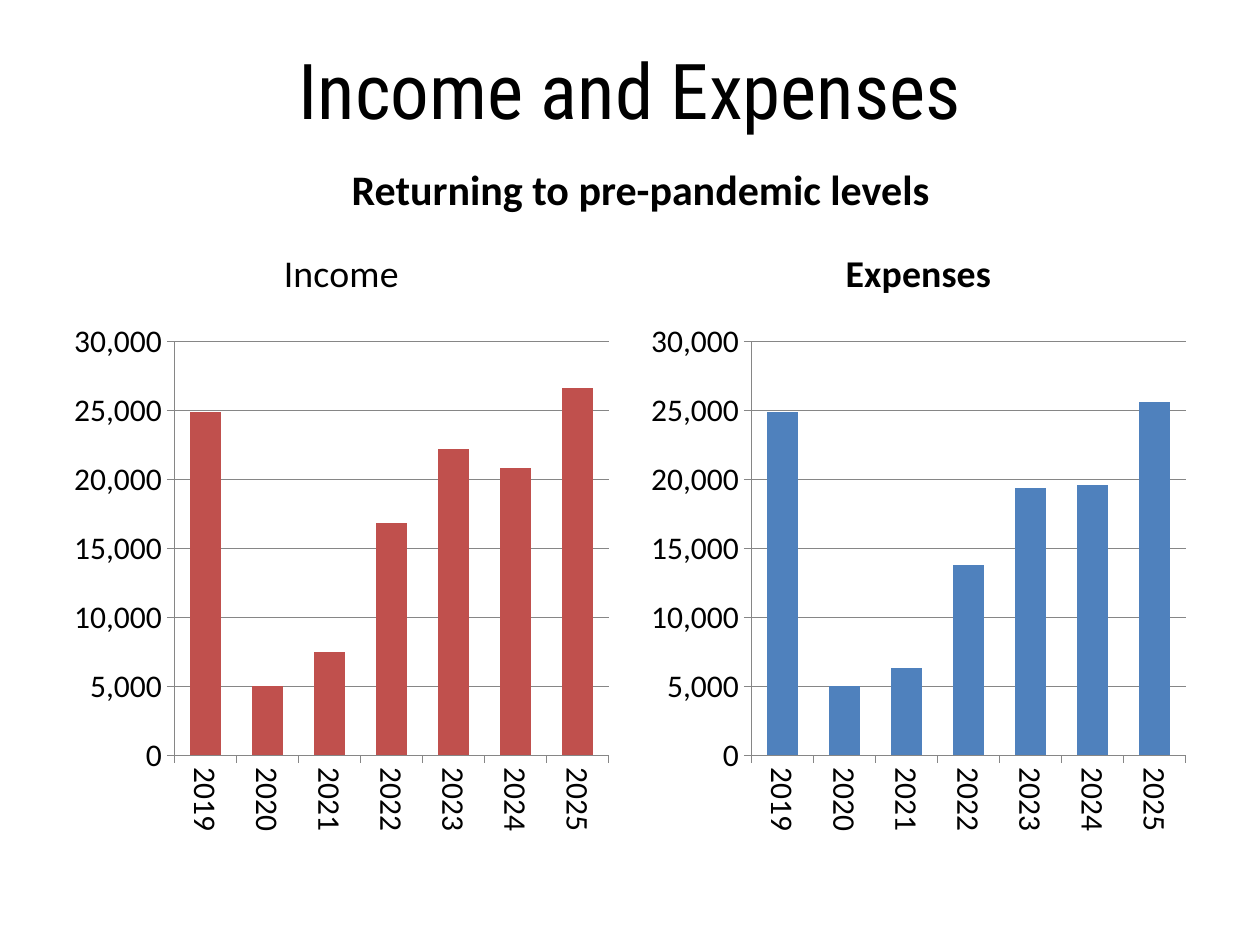
from dataclasses import dataclass

from pptx import Presentation
from pptx.chart.data import CategoryChartData
from pptx.dml.color import RGBColor
from pptx.enum.chart import XL_CHART_TYPE, XL_TICK_MARK
from pptx.enum.text import MSO_ANCHOR, MSO_AUTO_SIZE, PP_ALIGN
from pptx.oxml.ns import qn
from pptx.util import Inches, Pt

STACKED = XL_CHART_TYPE.COLUMN_STACKED
TICK_OUT = XL_TICK_MARK.OUTSIDE
TICK_NONE = XL_TICK_MARK.NONE
CENTER = PP_ALIGN.CENTER
MIDDLE = MSO_ANCHOR.MIDDLE
GROW = MSO_AUTO_SIZE.SHAPE_TO_FIT_TEXT
TITLE_ONLY = 5


@dataclass(frozen=True)
class Theme:
    heading_font: str = "Roboto Condensed"
    body_font: str = "Calibri"
    text: str = "000000"
    axis: str = "868686"
    income: str = "C0504D"
    expenses: str = "4F81BD"
    heading_size: float = 44
    subtitle_size: float = 24
    chart_title_size: float = 21.6
    label_size: float = 18
    line_width: float = 0.75


THEME = Theme()
WIDTH, HEIGHT = 10, 7.5
MARGIN = 0.5
GAP = 0.16
COLUMN_WIDTH = (WIDTH - 2 * MARGIN - GAP) / 2
CHART_TOP, CHART_HEIGHT = 1.75, 4.95
YEARS = [str(year) for year in range(2019, 2026)]
CHARTS = [
    ("Income", [24900, 5000, 7500, 16800, 22200, 20800, 26600], THEME.income, False),
    ("Expenses", [24900, 5000, 6300, 13800, 19400, 19600, 25600], THEME.expenses, True),
]


def style_font(font, size, name=THEME.body_font, bold=False):
    font.name = name
    font.size = Pt(size)
    font.bold = bold
    font.color.rgb = RGBColor.from_string(THEME.text)


def write_line(frame, text, size, name=THEME.body_font, bold=False):
    para = frame.paragraphs[0]
    para.alignment = CENTER
    span = para.add_run()
    span.text = text
    style_font(span.font, size, name, bold)


def style_line(line):
    line.color.rgb = RGBColor.from_string(THEME.axis)
    line.width = Pt(THEME.line_width)


def add_heading(page, text):
    heading = page.shapes.title
    heading.left, heading.top = Inches(MARGIN), Inches(0.08)
    heading.width, heading.height = Inches(WIDTH - 2 * MARGIN), Inches(1.25)
    heading.text_frame.vertical_anchor = MIDDLE
    write_line(heading.text_frame, text, THEME.heading_size, THEME.heading_font)


def add_subtitle(page, text):
    box = page.shapes.add_textbox(Inches(1.92), Inches(1.25), Inches(6.33), Inches(0.5))
    box.text_frame.word_wrap = True
    box.text_frame.auto_size = GROW
    write_line(box.text_frame, text, THEME.subtitle_size, bold=True)


def style_axis(axis):
    axis.major_tick_mark = TICK_OUT
    axis.minor_tick_mark = TICK_NONE
    style_font(axis.tick_labels.font, THEME.label_size)
    style_line(axis.format.line)


def add_column_chart(page, column, name, values, color, bold):
    data = CategoryChartData(number_format="#,##0")
    data.categories = YEARS
    data.add_series(name, values)
    left = MARGIN + column * (COLUMN_WIDTH + GAP)
    chart = page.shapes.add_chart(
        STACKED, Inches(left), Inches(CHART_TOP),
        Inches(COLUMN_WIDTH), Inches(CHART_HEIGHT), data,
    ).chart
    style_font(chart.font, THEME.label_size)
    chart.has_legend = False
    chart.has_title = True
    chart.chart_title.include_in_layout = False
    write_line(chart.chart_title.text_frame, name, THEME.chart_title_size, bold=bold)

    plot = chart.plots[0]
    plot.gap_width = 100
    plot.overlap = 100
    plot.vary_by_categories = False
    fill = plot.series[0].format.fill
    fill.solid()
    fill.fore_color.rgb = RGBColor.from_string(color)

    years, amounts = chart.category_axis, chart.value_axis
    for axis in (years, amounts):
        style_axis(axis)
    label_body = years._element.find(qn("c:txPr")).find(qn("a:bodyPr"))
    label_body.set("rot", "5400000")
    label_body.set("vert", "horz")
    amounts.minimum_scale, amounts.maximum_scale = 0, 30000
    amounts.major_unit = 5000
    amounts.tick_labels.number_format = "#,##0"
    amounts.tick_labels.number_format_is_linked = False
    amounts.has_major_gridlines = True
    style_line(amounts.major_gridlines.format.line)


def main():
    deck = Presentation()
    deck.slide_width, deck.slide_height = Inches(WIDTH), Inches(HEIGHT)
    page = deck.slides.add_slide(deck.slide_layouts[TITLE_ONLY])
    add_heading(page, "Income and Expenses")
    for column, details in enumerate(CHARTS):
        add_column_chart(page, column, *details)
    add_subtitle(page, "Returning to pre-pandemic levels")
    deck.save("out.pptx")


if __name__ == "__main__":
    main()
